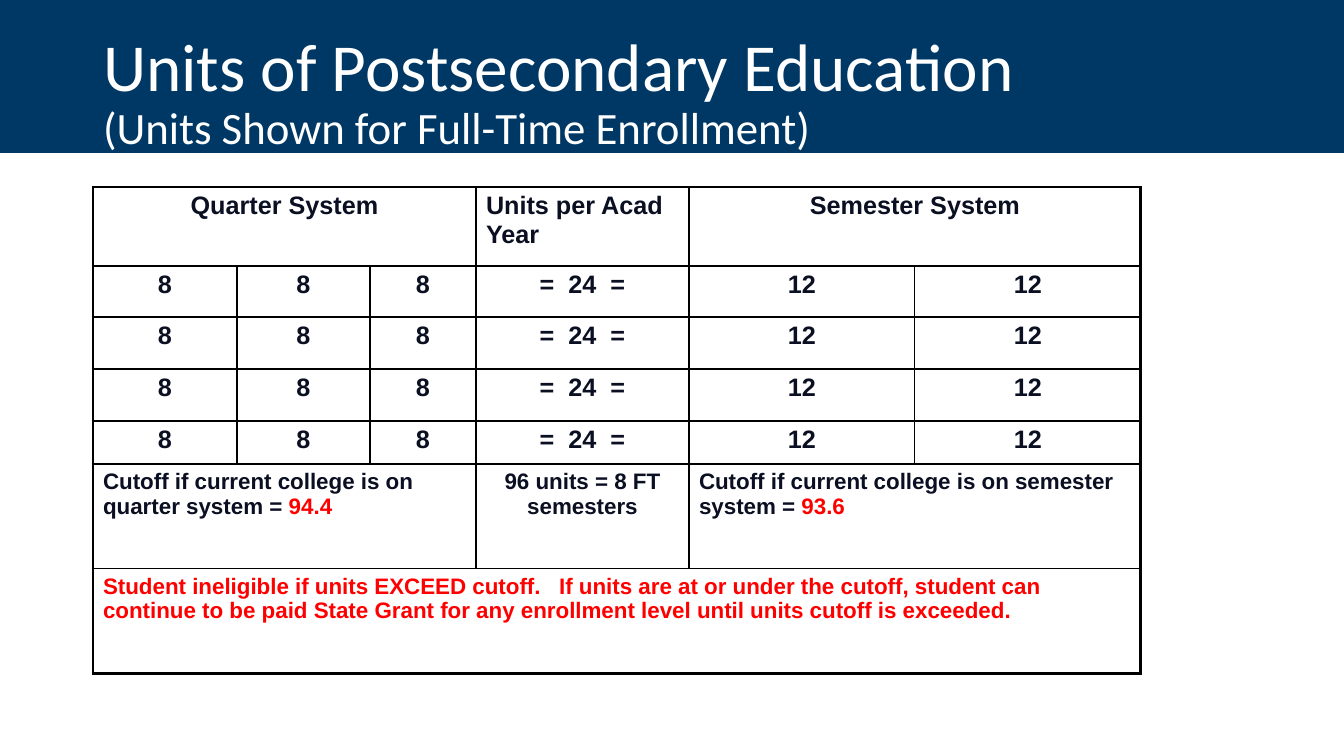
from dataclasses import dataclass

from lxml import etree
from pptx import Presentation
from pptx import util as u
from pptx.dml.color import RGBColor
from pptx.enum import shapes, text
from pptx.oxml.ns import qn


@dataclass(frozen=True)
class Theme:
    """Colours, fonts and type sizes of the slide."""
    navy: str = "003865"
    white: str = "FFFFFF"
    ink: str = "0A0F22"
    red: str = "FF0000"
    rule: str = "000000"
    head: str = "Calibri"
    body: str = "Arial"
    title: int = 48
    sub: int = 32
    large: int = 18
    small: int = 16
    thin: float = 1
    thick: float = 2.25


LEFT, MID = text.PP_ALIGN.LEFT, text.PP_ALIGN.CENTER
SCALE = 914400 / 100.8


def px(num):
    """Turn pixels into EMU."""
    return u.Emu(round(num * SCALE))


class Deck:
    """Holds the theme and the current slide."""

    def __init__(self, theme, width, height):
        """Start a deck with one title-only slide."""
        self.theme = theme
        self.prs = Presentation()
        self.prs.slide_width, self.prs.slide_height = px(width), px(height)
        self.slide = self.prs.slides.add_slide(self.prs.slide_layouts[5])

    def font(self, font, name, size, color, bold=False):
        """Style a font."""
        font.name, font.size, font.bold = name, u.Pt(size), bold
        font.color.rgb = RGBColor.from_string(color)

    def band(self, *box):
        """Lay a plain band behind everything else."""
        band = self.slide.shapes.add_shape(
            shapes.MSO_SHAPE.RECTANGLE, *map(px, box))
        band.shadow.inherit = False
        band.fill.solid()
        band.fill.fore_color.rgb = RGBColor.from_string(self.theme.navy)
        band.line.fill.background()
        self.slide.shapes._spTree.insert(2, band._element)

    def title(self, box, main, sub):
        """Place the title with a smaller second line."""
        look = self.theme
        title = self.slide.shapes.title
        title.left, title.top, title.width, title.height = map(px, box)
        frame = title.text_frame
        frame.word_wrap = True
        frame.auto_size = text.MSO_AUTO_SIZE.NONE
        frame.vertical_anchor = text.MSO_ANCHOR.MIDDLE
        para = frame.paragraphs[0]
        para.alignment, para.line_spacing = LEFT, 0.9
        for line, size in ((main, look.title), (sub, look.sub)):
            if para.runs:
                para.add_line_break()
            run = para.add_run()
            run.text = line
            self.font(run.font, look.head, size, look.white)

    def table(self, left, top, cols, rows, cells):
        """Add a ruled table; cells map (row, column) to (span, cell values)."""
        grid = self.slide.shapes.add_table(
            len(rows), len(cols), *map(px, (left, top, sum(cols), sum(rows)))).table
        grid.first_row = grid.horz_banding = False
        for col, width in zip(grid.columns, cols):
            col.width = px(width)
        for row, height in zip(grid.rows, rows):
            row.height = px(height)
        for (row, col), (span, *data) in cells.items():
            cell = grid.cell(row, col)
            if span > 1:
                cell.merge(grid.cell(row, col + span - 1))
            self.cell(cell, *data)
            self.edges(cell, {"L": col == 0, "R": col + span == len(cols),
                              "T": row == 0, "B": row + 1 == len(rows)})

    def cell(self, cell, size, align, *parts):
        """Fill a cell with (words, colour) parts."""
        cell.fill.background()
        para = cell.text_frame.paragraphs[0]
        para.alignment = align
        for words, color in parts:
            run = para.add_run()
            run.text = words
            if len(parts) > 1:
                run.font.color.rgb = RGBColor.from_string(color)
        self.font(para.font, self.theme.body, size, parts[0][1], True)

    def edges(self, cell, sides):
        """Rule the sides of a cell, thick where flagged."""
        look = self.theme
        props = cell._tc.get_or_add_tcPr()
        for spot, (side, outer) in enumerate(sides.items()):
            width = u.Pt(look.thick if outer else look.thin)
            line = etree.Element(qn("a:ln" + side), w=str(int(width)))
            fill = etree.SubElement(line, qn("a:solidFill"))
            etree.SubElement(fill, qn("a:srgbClr"), val=look.rule)
            props.insert(spot, line)


def main():
    """Build and save the slide."""
    look = Theme()
    deck = Deck(look, 1344, 756)
    deck.band(0, 0, 1344, 153)
    deck.title((93, 0, 1159, 187), "Units of Postsecondary Education",
               "(Units Shown for Full-Time Enrollment)")

    big, small, ink, red = look.large, look.small, look.ink, look.red
    cells = {
        (0, 0): (3, big, MID, ("Quarter System", ink)),
        (0, 3): (1, big, LEFT, ("Units per Acad Year", ink)),
        (0, 4): (2, big, MID, ("Semester System", ink)),
        (5, 0): (3, small, LEFT,
                 ("Cutoff if current college is on quarter system = ", ink),
                 ("94.4", red)),
        (5, 3): (1, small, MID, ("96 units = 8 FT semesters", ink)),
        (5, 4): (2, small, LEFT,
                 ("Cutoff if current college is on semester system = ", ink),
                 ("93.6", red)),
        (6, 0): (6, small, LEFT, (
            "Student ineligible if units EXCEED cutoff.   If units are at or "
            "under the cutoff, student can continue to be paid State Grant for "
            "any enrollment level until units cutoff is exceeded.", red)),
    }
    year = ["8"] * 3 + ["=  24  ="] + ["12"] * 2
    for row in range(1, 5):
        for col, units in enumerate(year):
            cells[row, col] = (1, big, MID, (units, ink))
    deck.table(93, 187, (144, 133, 106, 213, 226, 226),
               (79, 51, 52, 52, 43, 105, 105), cells)
    deck.prs.save("out.pptx")


if __name__ == "__main__":
    main()
